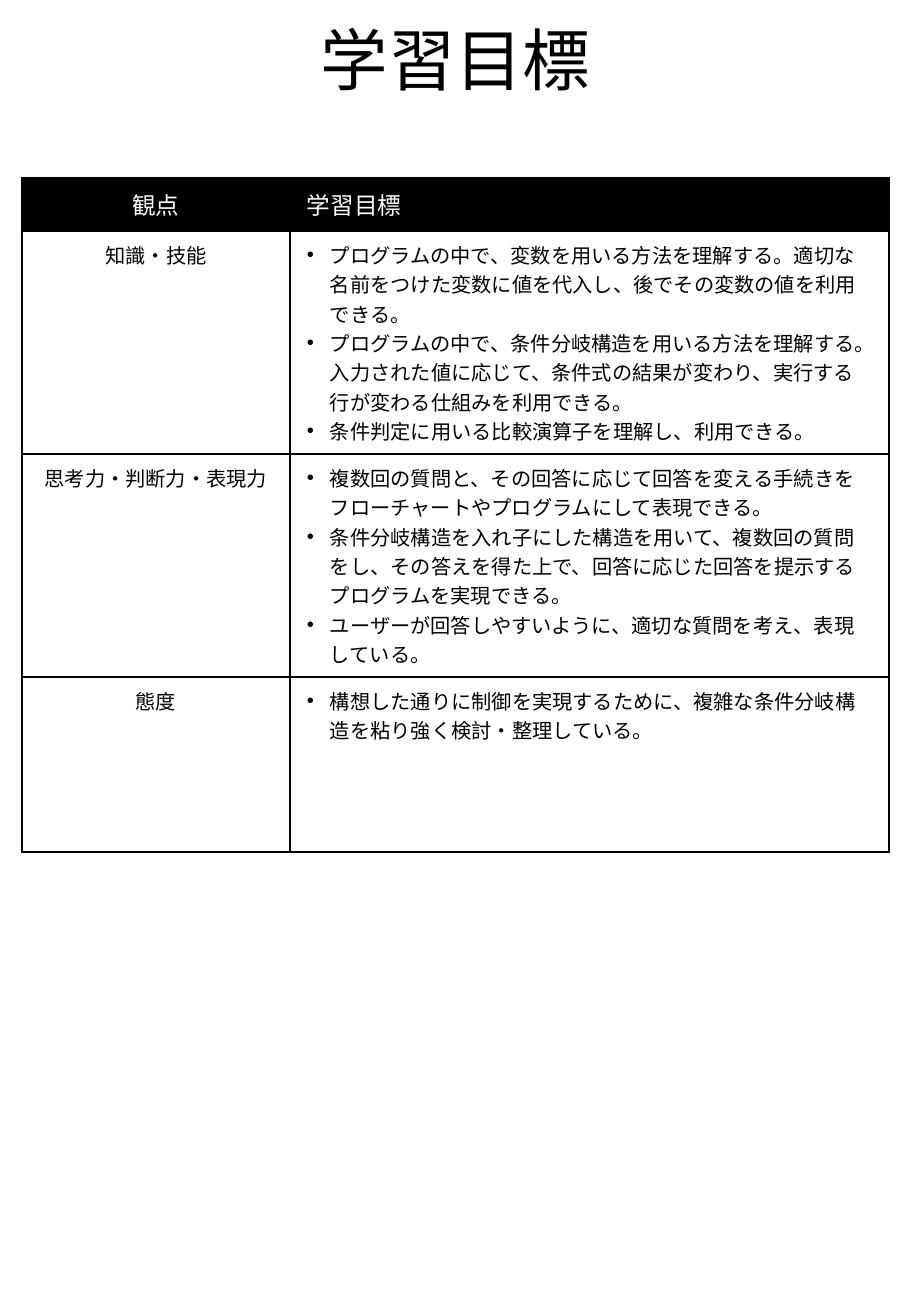
"""Build a portrait slide with a table of learning goals by viewpoint."""
from lxml import etree
from pptx import Presentation
from pptx.dml.color import RGBColor
from pptx.enum.text import MSO_ANCHOR as Anchor, PP_ALIGN as Align
from pptx.oxml.ns import qn
from pptx.util import Emu, Pt

FONT = "Noto Sans CJK JP"
BLACK, WHITE = "000000", "FFFFFF"
EMU_PER_PX = 7526
BULLET_INDENT = 23


def px(length):
    return Emu(length * EMU_PER_PX)


def style(paragraph, size, color, align):
    paragraph.alignment = align
    paragraph.font.size = Pt(size)
    paragraph.font.name = FONT
    paragraph.font.color.rgb = RGBColor.from_string(color)
    latin = paragraph.font._element.find(qn("a:latin"))
    east_asian = etree.Element(qn("a:ea"), typeface=FONT)
    latin.addnext(east_asian)


rows = [
    (53, "観点", ["学習目標"]),
    (223, "知識・技能", [
        "プログラムの中で、変数を用いる方法を理解する。適切な名前をつけた変数に値を代入し、後でその変数の値を利用できる。",
        "プログラムの中で、条件分岐構造を用いる方法を理解する。入力された値に応じて、条件式の結果が変わり、実行する行が変わる仕組みを利用できる。",
        "条件判定に用いる比較演算子を理解し、利用できる。",
    ]),
    (223, "思考力・判断力・表現力", [
        "複数回の質問と、その回答に応じて回答を変える手続きをフローチャートやプログラムにして表現できる。",
        "条件分岐構造を入れ子にした構造を用いて、複数回の質問をし、その答えを得た上で、回答に応じた回答を提示するプログラムを実現できる。",
        "ユーザーが回答しやすいように、適切な質問を考え、表現している。",
    ]),
    (175, "態度", [
        "構想した通りに制御を実現するために、複雑な条件分岐構造を粘り強く検討・整理している。",
    ]),
]

prs = Presentation()
prs.slide_width, prs.slide_height = px(911), px(1316)
slide = prs.slides.add_slide(prs.slide_layouts[6])

title = slide.shapes.add_textbox(px(68), px(8), px(775), px(98)).text_frame
title.word_wrap = True
title.vertical_anchor = Anchor.BOTTOM
heading = title.paragraphs[0]
heading.text = "学習目標"
heading.line_spacing = 0.9
style(heading, 40, BLACK, Align.CENTER)

table_height = sum(height for height, _, _ in rows)
table = slide.shapes.add_table(
    len(rows), 2, px(22), px(178), px(867), px(table_height)).table
for column, width in zip(table.columns, (268, 599)):
    column.width = px(width)

for r, (height, viewpoint, details) in enumerate(rows):
    is_header = r == 0
    table.rows[r].height = px(height)
    size, color = (14, WHITE) if is_header else (12, BLACK)
    for c, lines in enumerate(([viewpoint], details)):
        cell = table.cell(r, c)
        cell.margin_left = cell.margin_right = px(17)
        cell.margin_top = cell.margin_bottom = px(9)
        cell_props = cell._tc.get_or_add_tcPr()
        for side in ("lnL", "lnR", "lnT", "lnB"):
            border = etree.SubElement(cell_props, qn(f"a:{side}"), w=str(Pt(1)))
            border_fill = etree.SubElement(border, qn("a:solidFill"))
            etree.SubElement(border_fill, qn("a:srgbClr"), val=BLACK)
        cell.fill.solid()
        cell.fill.fore_color.rgb = RGBColor.from_string(BLACK if is_header else WHITE)

        cell.text = "\n".join(lines)
        for paragraph in cell.text_frame.paragraphs:
            if c == 1 and not is_header:
                props = paragraph._p.get_or_add_pPr()
                props.set("marL", str(px(BULLET_INDENT)))
                props.set("indent", str(px(-BULLET_INDENT)))
                etree.SubElement(props, qn("a:buFont"), typeface="Arial")
                etree.SubElement(props, qn("a:buChar"), char="•")
            style(paragraph, size, color, Align.LEFT if c else Align.CENTER)
            paragraph.font.bold = False

prs.save("out.pptx")
